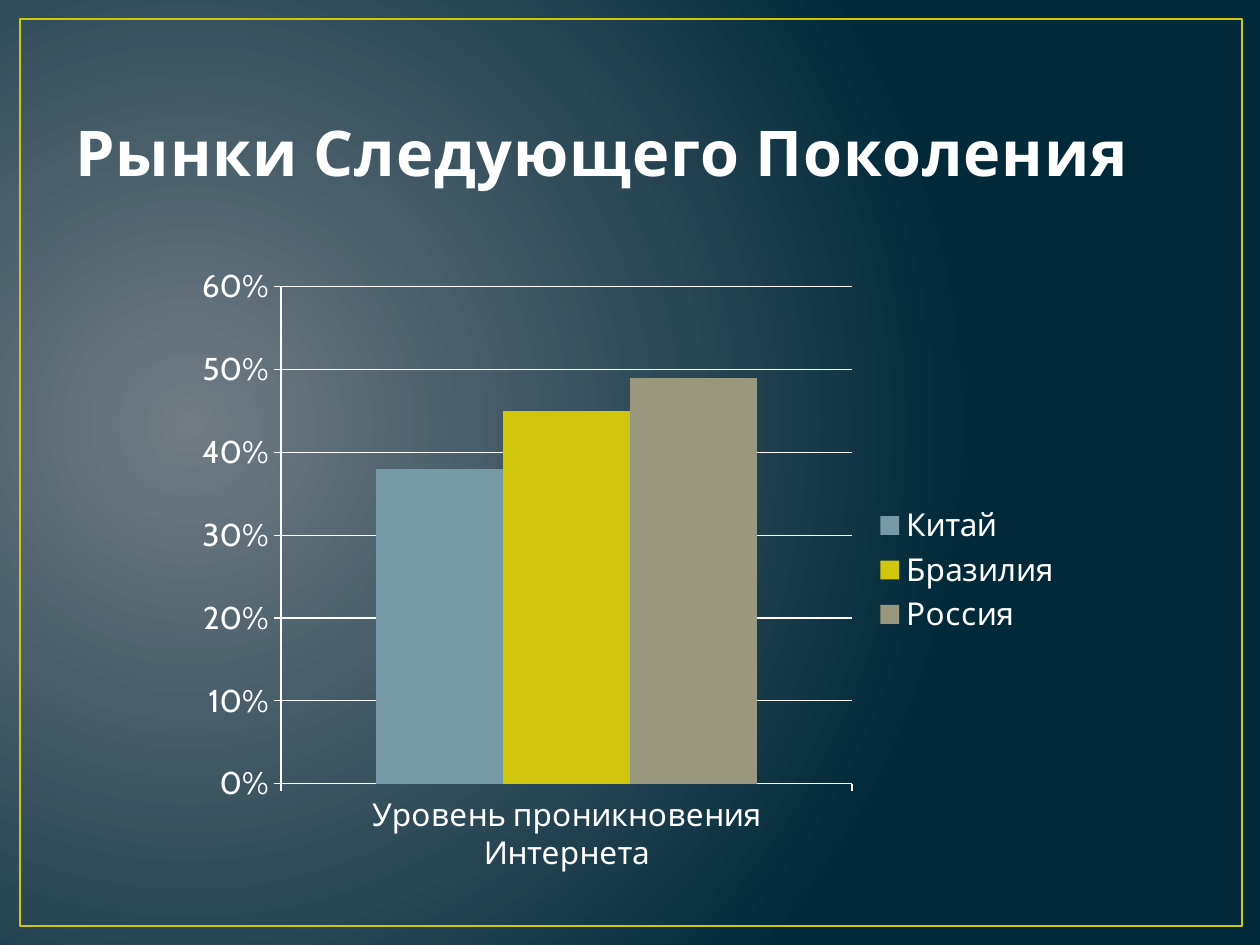
from lxml import etree
from pptx import Presentation
from pptx.chart.data import CategoryChartData
from pptx.dml.color import RGBColor
from pptx.enum.chart import XL_CHART_TYPE, XL_LEGEND_POSITION, XL_TICK_MARK
from pptx.enum.shapes import MSO_SHAPE
from pptx.enum.text import MSO_ANCHOR
from pptx.oxml import parse_xml
from pptx.oxml.ns import nsdecls
from pptx.util import Pt

COLUMNS = XL_CHART_TYPE.COLUMN_CLUSTERED
RIGHT = XL_LEGEND_POSITION.RIGHT
OUTSIDE = XL_TICK_MARK.OUTSIDE
RECTANGLE = MSO_SHAPE.RECTANGLE
BOTTOM = MSO_ANCHOR.BOTTOM

PX = 914400 // 126
FONT = "Cabin"
COLORS = {
    "glow": "717C84", "night": "01293A", "frame": "CFC60D",
    "title": "FEFEFE", "outline": "384F55", "white": "FFFFFF",
}
MARKETS = [
    ("Китай", 0.38, "759AA5"),
    ("Бразилия", 0.45, "CFC60D"),
    ("Россия", 0.49, "99987F"),
]


def rgb(name):
    return RGBColor.from_string(COLORS[name])


def place(left, top, width, height):
    return [length * PX for length in (left, top, width, height)]


deck = Presentation()
deck.slide_width, deck.slide_height = 1260 * PX, 945 * PX
page = deck.slides.add_slide(deck.slide_layouts[6])

# Background: circular glow left of centre
fill = page.background.fill
fill.gradient()
for stop, name in zip(fill.gradient_stops, ("glow", "night")):
    stop.color.rgb = rgb(name)
gradient = page.background._cSld.bg.bgPr[0]
gradient.remove(gradient[-1])
gradient.append(parse_xml(
    f'<a:path {nsdecls("a")} path="circle">'
    '<a:fillToRect l="15000" t="50000" r="85000" b="60000"/></a:path>'))

# Frame
frame = page.shapes.add_shape(RECTANGLE, *place(20, 19, 1222, 907))
frame.shadow.inherit = False
frame.fill.background()
frame.line.color.rgb = rgb("frame")
frame.line.width = Pt(1.5)

# Title
box = page.shapes.add_textbox(*place(63, 38, 1134, 157))
box.text_frame.word_wrap = True
box.text_frame.vertical_anchor = BOTTOM
span = box.text_frame.paragraphs[0].add_run()
span.text = "Рынки Следующего Поколения"
for key, value in {"size": Pt(36), "bold": True, "name": FONT}.items():
    setattr(span.font, key, value)
span.font.color.rgb = rgb("title")
properties = span.font._element
properties.set("spc", "50")
properties.insert(0, parse_xml(
    f'<a:ln {nsdecls("a")} w="{Pt(1.05)}"><a:solidFill>'
    f'<a:srgbClr val="{COLORS["outline"]}"/></a:solidFill></a:ln>'))

# Chart
data = CategoryChartData(number_format="0%")
data.categories = ["Уровень проникновения Интернета"]
for name, share, color in MARKETS:
    data.add_series(name, [share])
chart = page.shapes.add_chart(COLUMNS, *place(184, 255, 890, 630), data).chart
chart.has_title = False
chart.font.size = Pt(18)
chart.font.name = FONT
chart.font.color.rgb = rgb("white")

plot = chart.plots[0]
plot.gap_width = 150
plot.overlap = 0
plot.vary_by_categories = False
for series, (name, share, color) in zip(plot.series, MARKETS):
    series.format.fill.solid()
    series.format.fill.fore_color.rgb = RGBColor.from_string(color)

# Axes and legend
values = chart.value_axis
values.has_major_gridlines = True
values.tick_labels.number_format = "0%"
values.tick_labels.number_format_is_linked = False
for axis in (chart.category_axis, values):
    axis.major_tick_mark = OUTSIDE
for part in (chart.category_axis, values, values.major_gridlines):
    part.format.line.color.rgb = rgb("white")
    part.format.line.width = Pt(0.75)
chart.has_legend = True
chart.legend.position = RIGHT
chart.legend.include_in_layout = False

deck.save("out.pptx")
